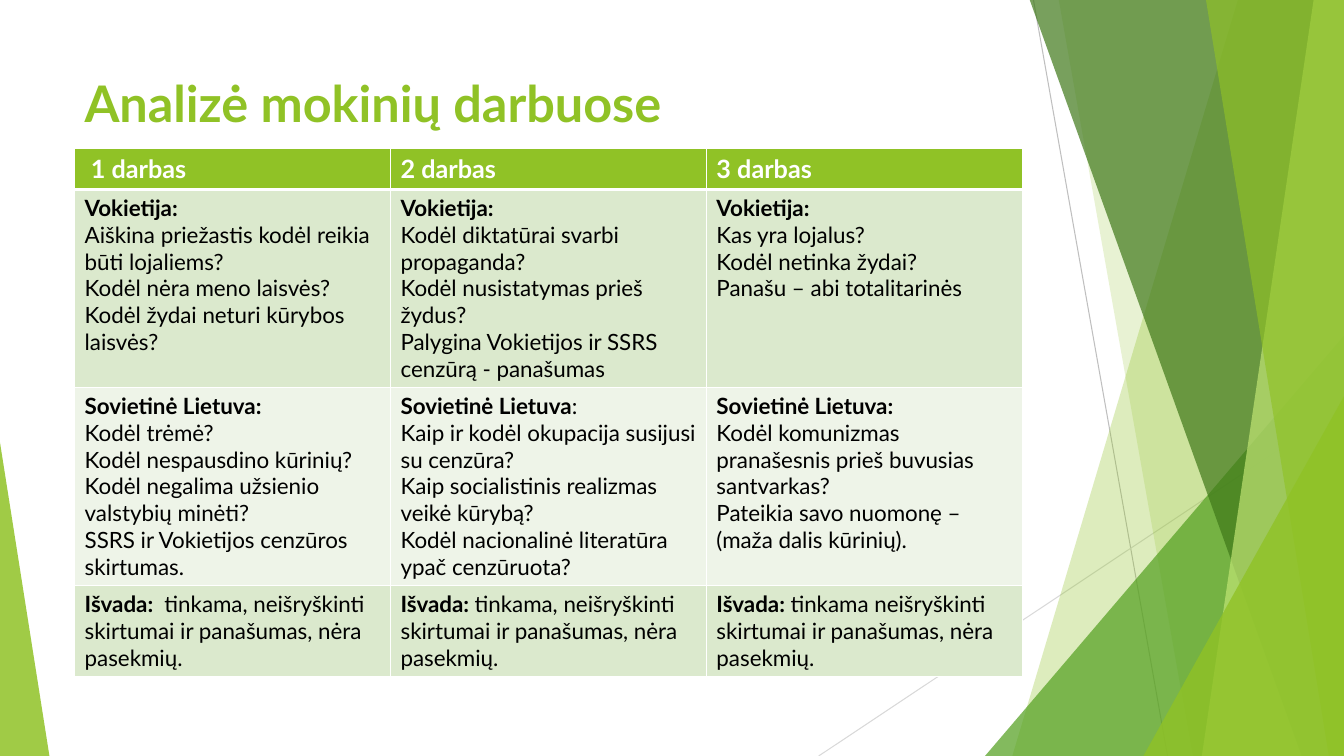
from dataclasses import dataclass

from lxml import etree
from pptx import Presentation
from pptx.dml.color import RGBColor
from pptx.enum.shapes import MSO_CONNECTOR, MSO_SHAPE
from pptx.enum.text import MSO_ANCHOR
from pptx.oxml.ns import qn
from pptx.util import Inches, Pt

STRAIGHT = MSO_CONNECTOR.STRAIGHT
TRIANGLE = MSO_SHAPE.ISOSCELES_TRIANGLE
TOP = MSO_ANCHOR.TOP


@dataclass(frozen=True)
class Theme:
    font: str = "Lato"
    title_size: int = 36
    header_size: int = 18
    body_size: int = 16
    green: str = "90C226"
    mid_green: str = "54A021"
    dark_green: str = "3F7819"
    pale_green: str = "C0E474"
    row_dark: str = "DBE9CD"
    row_light: str = "EEF4E8"
    white: str = "FFFFFF"
    black: str = "000000"
    grey: str = "BFBFBF"
    light_grey: str = "D9D9D9"


T = Theme()
WIDTH, HEIGHT = 13.33, 7.5
BAND_TOP = -0.01


@dataclass(frozen=True)
class Ray:
    start: tuple[float, float]
    end: tuple[float, float]
    color: str


@dataclass(frozen=True)
class Band:
    """Four-sided strip that runs to the right edge of the slide."""
    top_x: float
    bottom_x: float
    color: str
    opacity: int


@dataclass(frozen=True)
class Corner:
    """Right triangle standing on the bottom edge of the slide."""
    left: float
    top: float
    width: float
    apex: float
    color: str
    opacity: int


@dataclass(frozen=True)
class Entry:
    """Table cell: bold lead, plain text after it, further paragraphs."""
    lead: str
    tail: str = ""
    lines: tuple[str, ...] = ()


@dataclass(frozen=True)
class Row:
    height: float
    fill: str
    color: str
    size: int
    entries: tuple[Entry, ...]


RAYS = (
    Ray((10.25, 0), (11.58, HEIGHT), T.grey),
    Ray((WIDTH, 4.03), (8.12, HEIGHT), T.light_grey),
)
FACETS = (
    Band(12.28, 10.04, T.green, 30),
    Band(10.5, 11.83, T.green, 20),
    Corner(9.77, 3.33, 3.56, 1, T.mid_green, 72),
    Band(10.21, 12.91, T.dark_green, 70),
    Band(13.03, 11.92, T.pale_green, 70),
    Band(11.96, 13.18, T.green, 65),
    Corner(11.34, 3.93, 1.99, 1, T.green, 80),
    Corner(0, 4.39, 0.49, 0, T.green, 85),
)
ROWS = (
    Row(0.41, T.green, T.white, T.header_size,
        (Entry(" 1 darbas"), Entry("2 darbas"), Entry("3 darbas"))),
    Row(1.96, T.row_dark, T.black, T.body_size, (
        Entry("Vokietija:", lines=(
            "Aiškina priežastis kodėl reikia būti lojaliems?",
            "Kodėl nėra meno laisvės? Kodėl žydai neturi kūrybos laisvės?")),
        Entry("Vokietija:", lines=(
            "Kodėl diktatūrai svarbi propaganda?",
            "Kodėl nusistatymas prieš žydus?",
            "Palygina Vokietijos ir SSRS cenzūrą - panašumas")),
        Entry("Vokietija:", lines=(
            "Kas yra lojalus?",
            "Kodėl netinka žydai?",
            "Panašu – abi totalitarinės")))),
    Row(1.96, T.row_light, T.black, T.body_size, (
        Entry("Sovietinė Lietuva:", lines=(
            "Kodėl trėmė?",
            "Kodėl nespausdino kūrinių? Kodėl negalima užsienio valstybių minėti?",
            "SSRS ir Vokietijos cenzūros skirtumas.")),
        Entry("Sovietinė Lietuva", ":", (
            "Kaip ir kodėl okupacija susijusi su cenzūra?",
            "Kaip socialistinis realizmas veikė kūrybą?",
            "Kodėl nacionalinė literatūra ypač cenzūruota?")),
        Entry("Sovietinė Lietuva:", lines=(
            "Kodėl komunizmas pranašesnis prieš buvusias santvarkas?",
            "Pateikia savo nuomonę – (maža dalis kūrinių).")))),
    Row(0.89, T.row_dark, T.black, T.body_size, (
        Entry("Išvada: ", " tinkama, neišryškinti skirtumai ir panašumas, nėra pasekmių."),
        Entry("Išvada: ", "tinkama, neišryškinti skirtumai ir panašumas, nėra pasekmių."),
        Entry("Išvada: ", "tinkama neišryškinti skirtumai ir panašumas, nėra pasekmių."))),
)


def add_ray(s, ray: Ray) -> None:
    line = s.shapes.add_connector(STRAIGHT, *map(Inches, ray.start + ray.end))
    line.line.color.rgb = RGBColor.from_string(ray.color)
    line.line.width = Pt(0.75)
    etree.SubElement(line._element.spPr, qn("a:effectLst"))


def add_facet(s, facet: Band | Corner) -> None:
    if isinstance(facet, Band):
        outline = s.shapes.build_freeform(Inches(facet.top_x), Inches(BAND_TOP))
        corners = ((WIDTH, BAND_TOP), (WIDTH, HEIGHT), (facet.bottom_x, HEIGHT))
        outline.add_line_segments([(Inches(x), Inches(y)) for x, y in corners])
        sp = outline.convert_to_shape()
    else:
        sp = s.shapes.add_shape(TRIANGLE, Inches(facet.left), Inches(facet.top),
                                Inches(facet.width), Inches(HEIGHT - facet.top))
        sp.adjustments[0] = facet.apex
    sp.shadow.inherit = False
    sp.line.fill.background()
    sp.fill.solid()
    sp.fill.fore_color.rgb = RGBColor.from_string(facet.color)
    color = sp._element.spPr.find(f".//{qn('a:srgbClr')}")
    etree.SubElement(color, qn("a:alpha"), val=str(facet.opacity * 1000))


def style(p, size: int, color: str) -> None:
    p.font.name = T.font
    p.font.size = Pt(size)
    p.font.color.rgb = RGBColor.from_string(color)


def add_title(s, text: str) -> None:
    tf = s.shapes.add_textbox(Inches(0.74), Inches(0.67), Inches(9.4), Inches(0.8)).text_frame
    tf.word_wrap = True
    tf.vertical_anchor = TOP
    p = tf.paragraphs[0]
    p.text = text
    style(p, T.title_size, T.green)
    p.font.bold = True


def set_borders(cell, top: float, bottom: float) -> None:
    widths = {"a:lnL": 1, "a:lnR": 1, "a:lnT": top, "a:lnB": bottom}
    for i, (tag, width) in enumerate(widths.items()):
        ln = etree.Element(qn(tag), w=str(Pt(width)))
        fill = etree.SubElement(ln, qn("a:solidFill"))
        etree.SubElement(fill, qn("a:srgbClr"), val=T.white)
        cell._tc.get_or_add_tcPr().insert(i, ln)


def fill_cell(cell, entry: Entry, row: Row) -> None:
    cell.fill.solid()
    cell.fill.fore_color.rgb = RGBColor.from_string(row.fill)
    tf = cell.text_frame
    first = tf.paragraphs[0]
    for text, bold in ((entry.lead, True), (entry.tail, False)):
        if text:
            r = first.add_run()
            r.text = text
            r.font.bold = bold
    for line in entry.lines:
        p = tf.add_paragraph()
        p.text = line
        p.font.bold = False
    for p in tf.paragraphs:
        style(p, row.size, row.color)


def add_work_table(s, rows: tuple[Row, ...]) -> None:
    columns = len(rows[0].entries)
    height = sum(row.height for row in rows)
    table = s.shapes.add_table(len(rows), columns, Inches(0.74), Inches(1.47),
                               Inches(9.4), Inches(height)).table
    for i, row in enumerate(rows):
        table.rows[i].height = Inches(row.height)
        for j, entry in enumerate(row.entries):
            cell = table.cell(i, j)
            fill_cell(cell, entry, row)
            # A heavier rule separates the header from the body
            set_borders(cell, top=3 if i == 1 else 1, bottom=3 if i == 0 else 1)


def main() -> None:
    prs = Presentation()
    prs.slide_width, prs.slide_height = Inches(WIDTH), Inches(HEIGHT)
    s = prs.slides.add_slide(prs.slide_layouts[6])
    # Background rays and facets
    for ray in RAYS:
        add_ray(s, ray)
    for facet in FACETS:
        add_facet(s, facet)
    # Content
    add_title(s, "Analizė mokinių darbuose")
    add_work_table(s, ROWS)
    prs.save("out.pptx")


if __name__ == "__main__":
    main()
